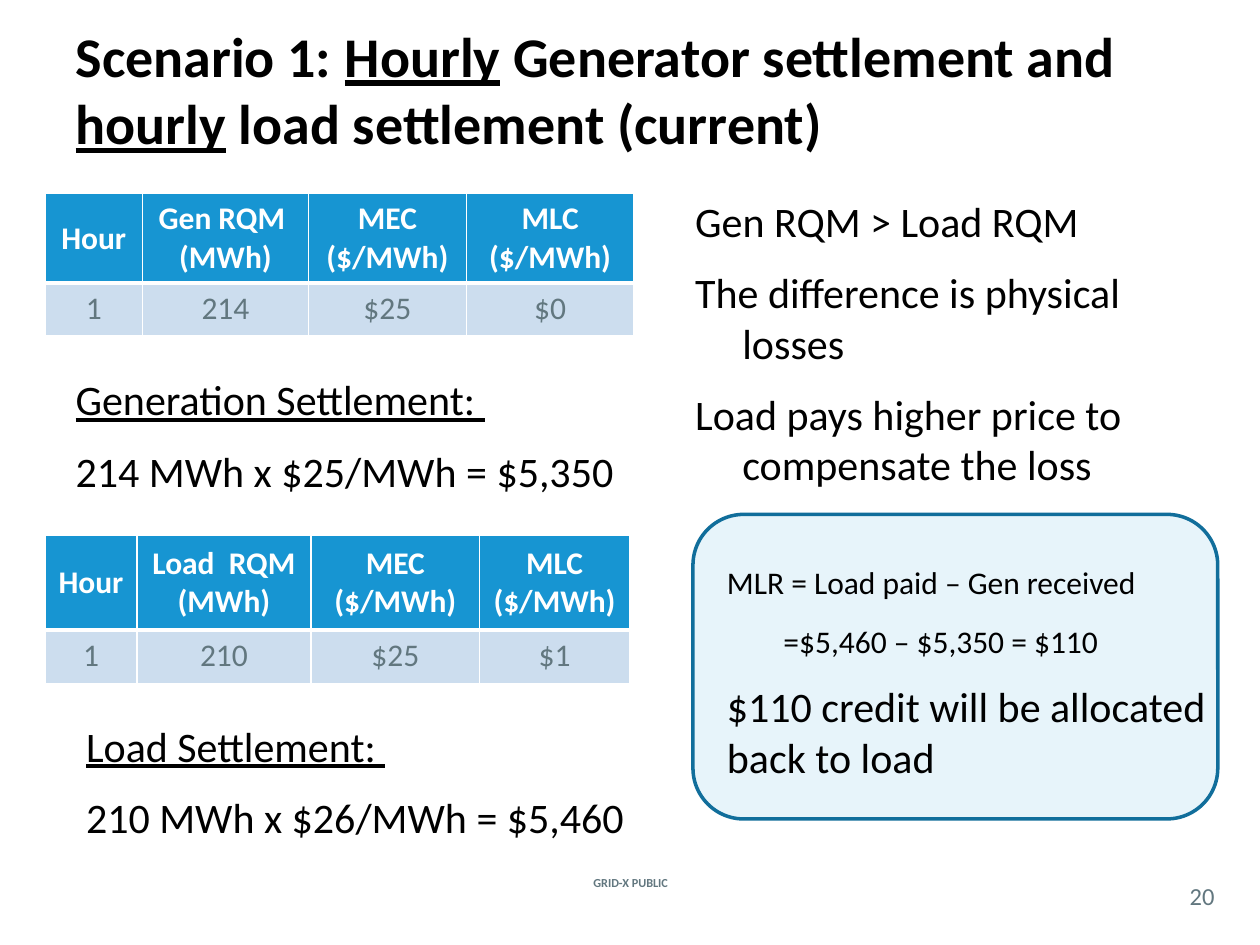
from pptx import Presentation
from pptx.dml.color import RGBColor
from pptx.enum.shapes import MSO_SHAPE as Shape
from pptx.enum.text import MSO_ANCHOR as Anchor, MSO_AUTO_SIZE as AutoSize, PP_ALIGN as Align
from pptx.oxml.ns import qn
from pptx.util import Cm, Pt
from lxml.etree import SubElement, Element

BLUE, PALE, EDGE = "1795D2", "CCDDEE", "116E9B"
WHITE, BLACK, GREY = "FFFFFF", "000000", "62777F"
HANGING = (0.95, -0.95)
BODY = {"size": Pt(24), "bold": False, "underline": False}
UNDERLINED = {**BODY, "underline": True}
SMALL = {**BODY, "size": Pt(18)}
TITLE = {"size": Pt(32), "bold": True, "underline": False}
TITLE_MARKED = {**TITLE, "underline": True}
HEADER_CELL = {"size": Pt(18), "bold": True}
VALUE_CELL = {"size": Pt(18), "bold": False}


def color(value):
    return RGBColor.from_string(value)


def place(item, left, top, width, height):
    item.left, item.top, item.width, item.height = map(Cm, (left, top, width, height))


def add_span(para, text, formats, shade=BLACK):
    span = para.add_run()
    span.text = text
    span.font.name = "Calibri"
    span.font.color.rgb = color(shade)
    for name, value in formats.items():
        setattr(span.font, name, value)


def next_para(frame, index):
    return frame.add_paragraph() if index else frame.paragraphs[0]


def set_title(page):
    place(page.shapes.title, 1.27, 0.2, 22.86, 3.18)
    frame = page.shapes.title.text_frame
    frame.auto_size = AutoSize.NONE
    frame.vertical_anchor = Anchor.MIDDLE
    para = frame.paragraphs[0]
    para.alignment = Align.LEFT
    add_span(para, "Scenario 1: ", TITLE)
    add_span(para, "Hourly", TITLE_MARKED)
    add_span(para, " Generator settlement and ", TITLE)
    add_span(para, "hourly", TITLE_MARKED)
    add_span(para, " load settlement (current)", TITLE)


def fill_body(box, bounds, lines):
    place(box, *bounds)
    frame = box.text_frame
    frame.word_wrap = True
    frame.auto_size = AutoSize.NONE
    frame.vertical_anchor = Anchor.TOP
    for index, (text, formats, (margin, indent)) in enumerate(lines):
        para = next_para(frame, index)
        para.alignment = Align.LEFT
        para.space_before = Pt(12 if index else 0)
        props = para._p.get_or_add_pPr()
        props.set("marL", str(Cm(margin)))
        props.set("indent", str(Cm(indent)))
        SubElement(props, qn("a:buNone"))
        add_span(para, text, formats)


def add_label(page, bounds, text, formats):
    box = page.shapes.add_textbox(*map(Cm, bounds))
    frame = box.text_frame
    frame.word_wrap = True
    frame.vertical_anchor = Anchor.MIDDLE
    for side in ("left", "top", "right", "bottom"):
        setattr(frame, f"margin_{side}", Cm(0))
    frame.paragraphs[0].alignment = Align.CENTER
    add_span(frame.paragraphs[0], text, formats, GREY)


def set_borders(cell, widths):
    props = cell._tc.get_or_add_tcPr()
    for index, (side, width) in enumerate(zip("LRTB", widths)):
        line = Element(qn(f"a:ln{side}"), w=str(Pt(width)))
        fill = SubElement(line, qn("a:solidFill"))
        SubElement(fill, qn("a:srgbClr"), val=WHITE)
        props.insert(index, line)


def add_rates(page, top, columns, rows, content):
    frame = page.shapes.add_table(2, 4, Cm(0.91), Cm(top), Cm(sum(columns)), Cm(sum(rows)))
    table = frame.table
    table.horz_banding = False
    for column, width in zip(table.columns, columns):
        column.width = Cm(width)
    looks = ((HEADER_CELL, WHITE, BLUE, Anchor.MIDDLE, (1, 1, 1, 3)),
             (VALUE_CELL, GREY, PALE, Anchor.TOP, (1, 1, 3, 1)))
    for row, (texts, look) in enumerate(zip(content, looks)):
        formats, shade, back, anchor, widths = look
        table.rows[row].height = Cm(rows[row])
        for column, text in enumerate(texts):
            cell = table.cell(row, column)
            cell.vertical_anchor = anchor
            cell.fill.solid()
            cell.fill.fore_color.rgb = color(back)
            set_borders(cell, widths)
            for index, line in enumerate(text.split("\n")):
                para = next_para(cell.text_frame, index)
                para.alignment = Align.CENTER
                add_span(para, line, formats, shade)


def add_panel(page, bounds):
    panel = page.shapes.add_shape(Shape.ROUNDED_RECTANGLE, *map(Cm, bounds))
    panel.shadow.inherit = False
    panel.fill.solid()
    panel.fill.fore_color.rgb = color(BLUE)
    shade = panel._element.spPr.find(qn("a:solidFill"))[0]
    SubElement(shade, qn("a:alpha"), val="10000")
    panel.line.color.rgb = color(EDGE)
    panel.line.width = Pt(2)
    page.shapes._spTree.insert(2, panel._element)


def main():
    deck = Presentation()
    deck.slide_width, deck.slide_height = Cm(25.4), Cm(19.05)
    page = deck.slides.add_slide(deck.slide_layouts.get_by_name("Comparison"))
    add_panel(page, (13.97, 10.37, 10.58, 6.14))
    set_title(page)
    add_rates(page, 3.9, (1.96, 3.35, 3.18, 3.38), (1.73, 1.07), (
        ("Hour", "Gen RQM \n(MWh)", "MEC\n($/MWh)", "MLC ($/MWh)"),
        ("1", "214", "$25", "$0")))
    add_rates(page, 10.8, (1.85, 3.51, 3.4, 3.02), (1.9, 1.09), (
        ("Hour", "Load  RQM \n(MWh)", "MEC ($/MWh)", "MLC ($/MWh)"),
        ("1", "210", "$25", "$1")))
    generation, load, result, notes = list(page.placeholders)[1:5]
    fill_body(generation, (1.27, 7.41, 11.63, 2.97), (
        ("Generation Settlement: ", UNDERLINED, HANGING),
        ("214 MWh x $25/MWh = $5,350", BODY, HANGING)))
    fill_body(load, (1.48, 14.39, 11.43, 2.97), (
        ("Load Settlement: ", UNDERLINED, HANGING),
        ("210 MWh x $26/MWh = $5,460", BODY, HANGING)))
    fill_body(result, (14.4, 11.23, 10.36, 5.72), (
        ("MLR = Load paid – Gen received", SMALL, HANGING),
        ("=$5,460 – $5,350 = $110", SMALL, (1.14, 0)),
        ("$110 credit will be allocated back to load", BODY, (0, 0))))
    fill_body(notes, (13.76, 3.81, 10.36, 6.35), [
        (text, BODY, HANGING) for text in (
            "Gen RQM > Load RQM",
            "The difference is physical losses",
            "Load pays higher price to compensate the loss")])
    add_label(page, (10.85, 17.58, 3.73, 0.43), "GRID-X PUBLIC", {"size": Pt(7), "bold": True})
    add_label(page, (23.7, 17.68, 1.07, 0.74), "20", {"size": Pt(14)})
    deck.save("out.pptx")


if __name__ == "__main__":
    main()
